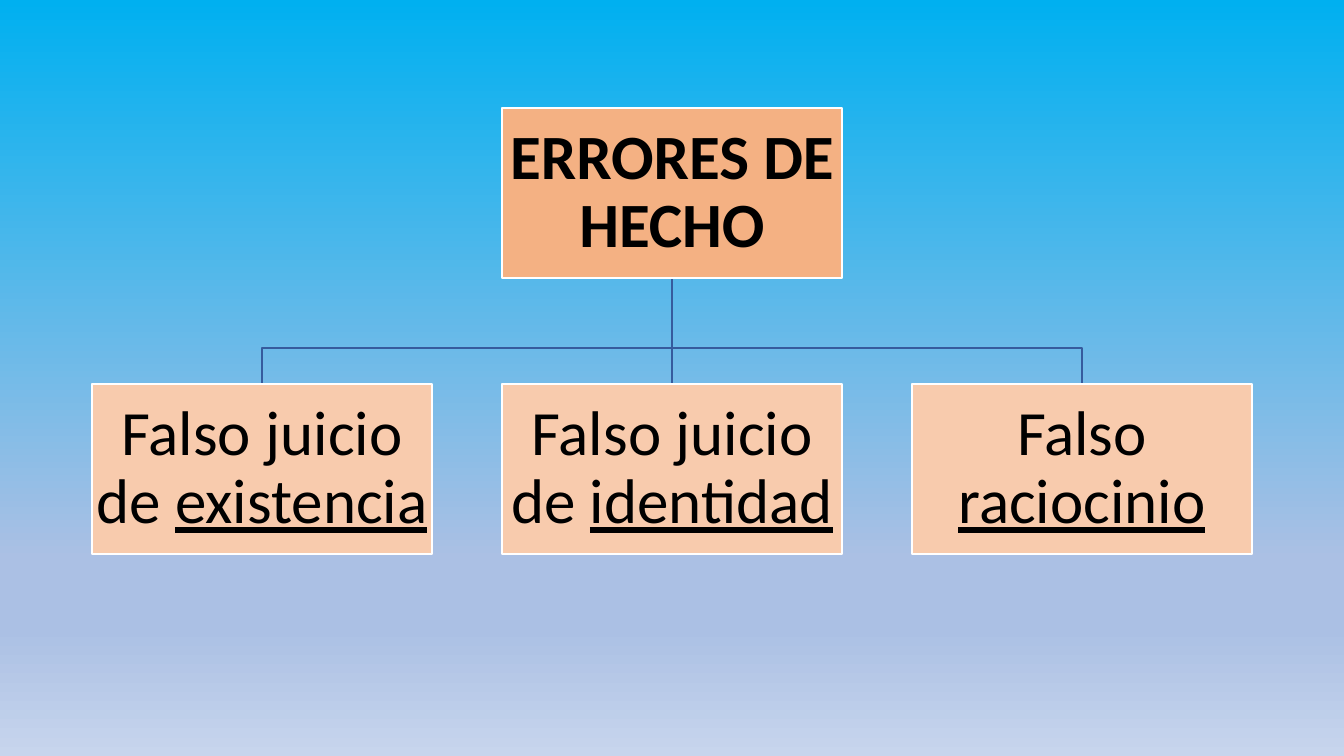
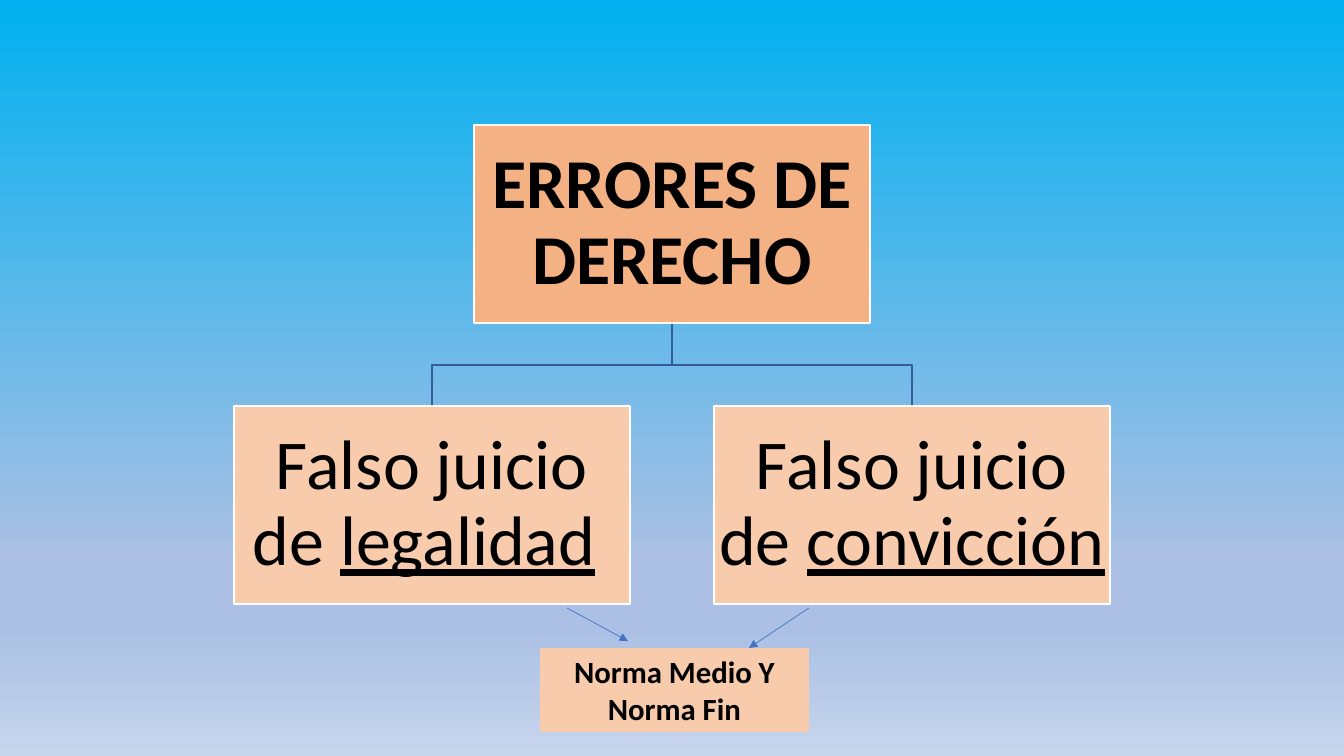
from lxml.etree import SubElement
from pptx import Presentation
from pptx.dml.color import RGBColor
from pptx.enum.shapes import MSO_CONNECTOR, MSO_SHAPE
from pptx.enum.text import MSO_ANCHOR, PP_ALIGN
from pptx.oxml.ns import qn
from pptx.util import Pt

EMU_PER_PX = 914400 / 100.8
SLIDE_WIDTH, SLIDE_HEIGHT = 1344, 756
CENTER = SLIDE_WIDTH // 2

FONT = "Calibri"
BLACK = RGBColor(0x00, 0x00, 0x00)
WHITE = RGBColor(0xFF, 0xFF, 0xFF)
ORANGE = RGBColor(0xF4, 0xB1, 0x83)
PEACH = RGBColor(0xF8, 0xCB, 0xAD)
BRANCH_BLUE = RGBColor(0x36, 0x5B, 0x9D)
ARROW_BLUE = RGBColor(0x44, 0x72, 0xC4)
SKY = RGBColor(0x00, 0xB0, 0xF0)
LAVENDER = RGBColor(0xAB, 0xC0, 0xE4)
MIST = RGBColor(0xC7, 0xD5, 0xED)
BACKGROUND_STOPS = [(0, SKY), (74, LAVENDER), (83, LAVENDER), (100, MIST)]


def px(length):
    return round(length * EMU_PER_PX)


class Deck:
    """Holds the shared style and the slide being drawn."""

    def __init__(self):
        self.presentation = Presentation()
        self.presentation.slide_width = px(SLIDE_WIDTH)
        self.presentation.slide_height = px(SLIDE_HEIGHT)
        self.slide = None
        self.paint_background()

    def paint_background(self):
        """Put the vertical gradient on the master, for every slide."""
        master = self.presentation.slide_master
        fill = master.background.fill
        fill.gradient()
        fill.gradient_angle = 270
        stops = master.element.find(f".//{qn('p:bg')}//{qn('a:gsLst')}")
        for stop in list(stops):
            stops.remove(stop)
        for percent, color in BACKGROUND_STOPS:
            stop = SubElement(stops, qn("a:gs"), pos=str(percent * 1000))
            SubElement(stop, qn("a:srgbClr"), val=str(color))

    def new_slide(self):
        self.slide = self.presentation.slides.add_slide(self.presentation.slide_layouts[6])

    def box(self, left, top, width, height, fill, runs, size, bold=False,
            outline=None, margin=None, line_spacing=None):
        """Draw a rectangle with centred text; runs are (text, underlined) pairs."""
        shape = self.slide.shapes.add_shape(
            MSO_SHAPE.RECTANGLE, px(left), px(top), px(width), px(height))
        shape.shadow.inherit = False
        shape.fill.solid()
        shape.fill.fore_color.rgb = fill
        if outline is None:
            shape.line.fill.background()
        else:
            shape.line.color.rgb = outline
            shape.line.width = Pt(1)
        frame = shape.text_frame
        frame.word_wrap = True
        frame.vertical_anchor = MSO_ANCHOR.MIDDLE
        if margin is not None:
            frame.margin_left = frame.margin_right = px(margin)
            frame.margin_top = frame.margin_bottom = px(margin)
        paragraph = frame.paragraphs[0]
        paragraph.alignment = PP_ALIGN.CENTER
        paragraph.line_spacing = line_spacing
        for text, underlined in runs:
            run = paragraph.add_run()
            run.text = text
            font = run.font
            font.name, font.size, font.bold = FONT, Pt(size), bold
            font.underline = underlined
            font.color.rgb = BLACK

    def line(self, start, end, color, weight, arrow=False):
        connector = self.slide.shapes.add_connector(
            MSO_CONNECTOR.STRAIGHT, *map(px, start + end))
        connector.line.color.rgb = color
        connector.line.width = Pt(weight)
        if arrow:
            SubElement(connector.line._get_or_add_ln(), qn("a:tailEnd"), type="triangle")
        SubElement(connector._element.spPr, qn("a:effectLst"))

    def branch(self, start, end, bend):
        """Link a root to a child, turning at height bend if they are not aligned."""
        if start[0] == end[0]:
            self.line(start, end, BRANCH_BLUE, 1)
            return
        builder = self.slide.shapes.build_freeform(*start, scale=EMU_PER_PX)
        builder.add_line_segments([(start[0], bend), (end[0], bend), end], close=False)
        shape = builder.convert_to_shape()
        shape.shadow.inherit = False
        shape.fill.background()
        shape.line.color.rgb = BRANCH_BLUE
        shape.line.width = Pt(1)

    def tree(self, title, children, size, box_size, gap, root_top, bend, child_top):
        """Draw a root box over a centred row of child boxes."""
        width, height = box_size
        pitch = width + gap
        first_center = CENTER - pitch * (len(children) - 1) // 2
        centers = [first_center + pitch * i for i in range(len(children))]
        for center in centers:
            self.branch((CENTER, root_top + height), (center, child_top), bend)
        style = {"size": size, "outline": WHITE, "margin": 3, "line_spacing": 0.9}
        self.box(CENTER - width // 2, root_top, width, height, ORANGE,
                 [(title, False)], bold=True, **style)
        for center, runs in zip(centers, children):
            self.box(center - width // 2, child_top, width, height, PEACH, runs, **style)


def main():
    deck = Deck()

    deck.new_slide()
    deck.tree("ERRORES DE HECHO",
              [[("Falso juicio de ", False), ("existencia", True)],
               [("Falso juicio de ", False), ("identidad", True)],
               [("Falso ", False), ("raciocinio", True)]],
              size=45, box_size=(340, 170), gap=70,
              root_top=108, bend=348, child_top=384)

    deck.new_slide()
    deck.tree("ERRORES DE DERECHO",
              [[("Falso juicio de ", False), ("legalidad", True), (" ", False)],
               [("Falso juicio de ", False), ("convicción", True)]],
              size=50, box_size=(396, 198), gap=84,
              root_top=125, bend=365, child_top=406)
    deck.box(540, 648, 269, 84, PEACH, [("Norma Medio Y Norma Fin", False)],
             size=22, bold=True)
    for start, end in [((567, 608), (628, 641)), ((809, 608), (749, 648))]:
        deck.line(start, end, ARROW_BLUE, 0.5, arrow=True)

    deck.presentation.save("out.pptx")


if __name__ == "__main__":
    main()
